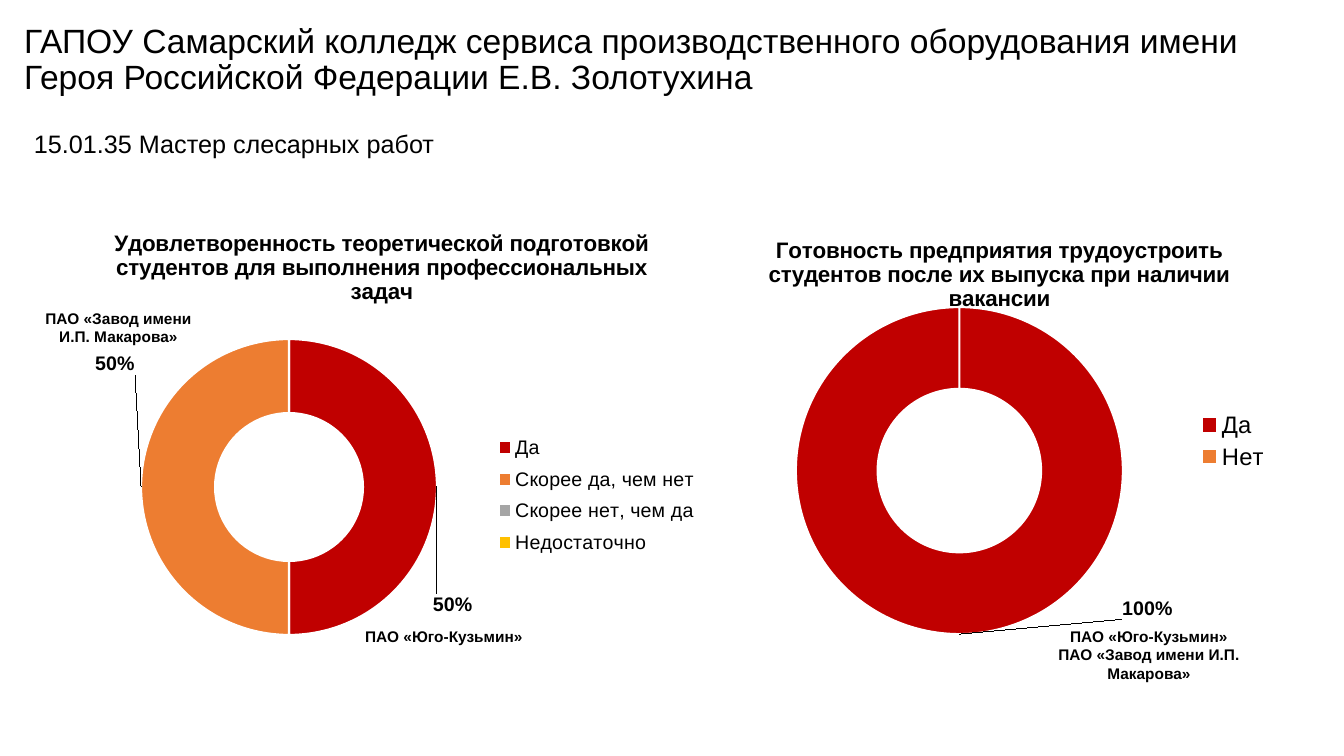
from lxml import etree
from pptx import Presentation
from pptx.chart.data import CategoryChartData
from pptx.dml.color import RGBColor
from pptx.enum.chart import XL_CHART_TYPE, XL_LEGEND_POSITION
from pptx.enum.text import MSO_ANCHOR, PP_ALIGN
from pptx.oxml import parse_xml
from pptx.oxml.ns import qn
from pptx.util import Pt

DOUGHNUT = XL_CHART_TYPE.DOUGHNUT
RIGHT = XL_LEGEND_POSITION.RIGHT
LEFT_ALIGN, CENTER = PP_ALIGN.LEFT, PP_ALIGN.CENTER
MIDDLE, TOP = MSO_ANCHOR.MIDDLE, MSO_ANCHOR.TOP

# Content; every box is left, top, width, height in px
TITLE = ("ГАПОУ Самарский колледж сервиса производственного оборудования "
         "имени Героя Российской Федерации Е.В. Золотухина")
TITLE_BOX = (14, 11, 1295, 99)
PLANT = "ПАО «Завод имени И.П. Макарова»"
ENGINES = "ПАО «Юго-Кузьмин»"

# lines, box, size, bold, alignment
NOTES = [
    (["15.01.35 Мастер слесарных работ"], (24, 123, 685, 40), 18, False, LEFT_ALIGN),
    ([ENGINES], (313, 622, 262, 29), 11, True, CENTER),
    ([PLANT], (35, 304, 167, 47), 11, True, CENTER),
    ([ENGINES, PLANT], (1018, 622, 262, 67), 11, True, CENTER),
]

# Boxes inside a chart and label shifts are px, measured from the chart corner
CHARTS = [
    {
        "title": "Удовлетворенность теоретической подготовкой студентов "
                 "для выполнения профессиональных задач",
        "box": (24, 211, 685, 464),
        "title_at": (86, 14),
        "plot": (117, 128, 296, 296),
        "legend": (471, 216, 203, 136),
        "legend_size": 14,
        "values": {"Да": 0.5, "Скорее да, чем нет": 0.5,
                   "Скорее нет, чем да": 0, "Недостаточно": 0},
        "label_shifts": [(53, 118), (-63, -123)],
    },
    {
        "title": "Готовность предприятия трудоустроить студентов "
                 "после их выпуска при наличии вакансии",
        "box": (685, 211, 623, 445),
        "title_at": (80, 21),
        "plot": (111, 96, 327, 327),
        "legend": (511, 196, 75, 68),
        "legend_size": 17,
        "values": {"Да": 1, "Нет": 0},
        "label_shifts": [(188, 15)],
    },
]
SLICE_COLORS = ["C00000", "ED7D31", "A5A5A5", "FFC000"]
FONT, BLACK, WHITE = "Arial", "000000", "FFFFFF"
EMU_PER_PX = 914400 / 100.8
CHART_NS = "http://schemas.openxmlformats.org/drawingml/2006/chart"


def px(*lengths):
    return [round(length * EMU_PER_PX) for length in lengths]


def color(hex_string):
    return RGBColor.from_string(hex_string)


def style_font(font, size, bold=False):
    font.name, font.size, font.bold = FONT, Pt(size), bold
    font.color.rgb = color(BLACK)


def manual_layout(chart_box, place, inner=False, edge=True):
    """Layout element with px turned into fractions of the chart."""
    width, height = chart_box[2:]
    fields = [("layoutTarget", "inner")] if inner else []
    if edge:
        fields += [("xMode", "edge"), ("yMode", "edge")]
    fields += [(name, round(length / side, 3)) for name, length, side
               in zip("xywh", place, (width, height) * 2)]
    body = "".join(f'<c:{name} val="{value}"/>' for name, value in fields)
    return parse_xml(f'<c:layout xmlns:c="{CHART_NS}"><c:manualLayout>{body}'
                     '</c:manualLayout></c:layout>')


def set_layout(parent, layout, after=None):
    for old in parent.findall(qn("c:layout")):
        parent.remove(old)
    if after is None:
        parent.insert(0, layout)
    else:
        parent.find(qn(after)).addnext(layout)


def add_doughnut(slide, content):
    box, values = content["box"], content["values"]
    data = CategoryChartData(number_format="0%")
    data.categories = list(values)
    data.add_series("Series 1", list(values.values()))
    chart = slide.shapes.add_chart(DOUGHNUT, *px(*box), data).chart
    style_font(chart.font, 10)

    # Heading
    heading = chart.chart_title
    heading.text_frame.text = content["title"]
    style_font(heading.text_frame.paragraphs[0].runs[0].font, 16, True)
    title_layout = manual_layout(box, content["title_at"])
    set_layout(heading._element, title_layout, "c:tx")

    # Legend
    chart.has_legend = True
    legend = chart.legend
    legend.position, legend.include_in_layout = RIGHT, False
    style_font(legend.font, content["legend_size"])
    set_layout(legend._element, manual_layout(box, content["legend"]), "c:legendPos")

    # Ring
    plot = chart.plots[0]
    plot.vary_by_categories = True
    plot._element.find(qn("c:holeSize")).set("val", "50")
    set_layout(plot._element.getparent(), manual_layout(box, content["plot"], inner=True))
    series = plot.series[0]
    for index in range(len(values)):
        slice_format = series.points[index].format
        slice_format.fill.solid()
        slice_format.fill.fore_color.rgb = color(SLICE_COLORS[index])
        slice_format.line.color.rgb = color(WHITE)
        slice_format.line.width = Pt(1.5)

    # Value labels: shifted outside the ring, none for empty slices
    labels = series.data_labels
    labels.show_value = True
    labels.number_format, labels.number_format_is_linked = "0%", False
    style_font(labels.font, 14, True)
    labels._element.find(qn("c:showLeaderLines")).set("val", "1")
    shifts = content["label_shifts"]
    for index in range(len(values)):
        label = series.points[index].data_label
        style_font(label.font, 14, True)
        element = labels._element.findall(qn("c:dLbl"))[index]
        if index < len(shifts):
            for flag in ("c:showCatName", "c:showSerName", "c:showPercent", "c:showLegendKey"):
                element.find(qn(flag)).set("val", "0")
            set_layout(element, manual_layout(box, shifts[index], edge=False), "c:idx")
        else:
            for child in list(element)[1:]:
                element.remove(child)
            etree.SubElement(element, qn("c:delete")).set("val", "1")


def add_note(slide, lines, box, size, bold, alignment):
    text_frame = slide.shapes.add_textbox(*px(*box)).text_frame
    text_frame.word_wrap = True
    text_frame.vertical_anchor = TOP
    text_frame.text = "\n".join(lines)
    for paragraph in text_frame.paragraphs:
        paragraph.alignment = alignment
        style_font(paragraph.runs[0].font, size, bold)


def main():
    presentation = Presentation()
    presentation.slide_width, presentation.slide_height = px(1344, 756)
    slide = presentation.slides.add_slide(presentation.slide_layouts[5])

    # Title
    title = slide.shapes.title
    title.left, title.top, title.width, title.height = px(*TITLE_BOX)
    title.text_frame.text = TITLE
    title.text_frame.vertical_anchor = MIDDLE
    paragraph = title.text_frame.paragraphs[0]
    paragraph.alignment, paragraph.line_spacing = LEFT_ALIGN, 0.9
    style_font(paragraph.runs[0].font, 24)

    # Charts, then the company names beside their labels
    for content in CHARTS:
        add_doughnut(slide, content)
    for note in NOTES:
        add_note(slide, *note)
    presentation.save("out.pptx")


if __name__ == "__main__":
    main()
